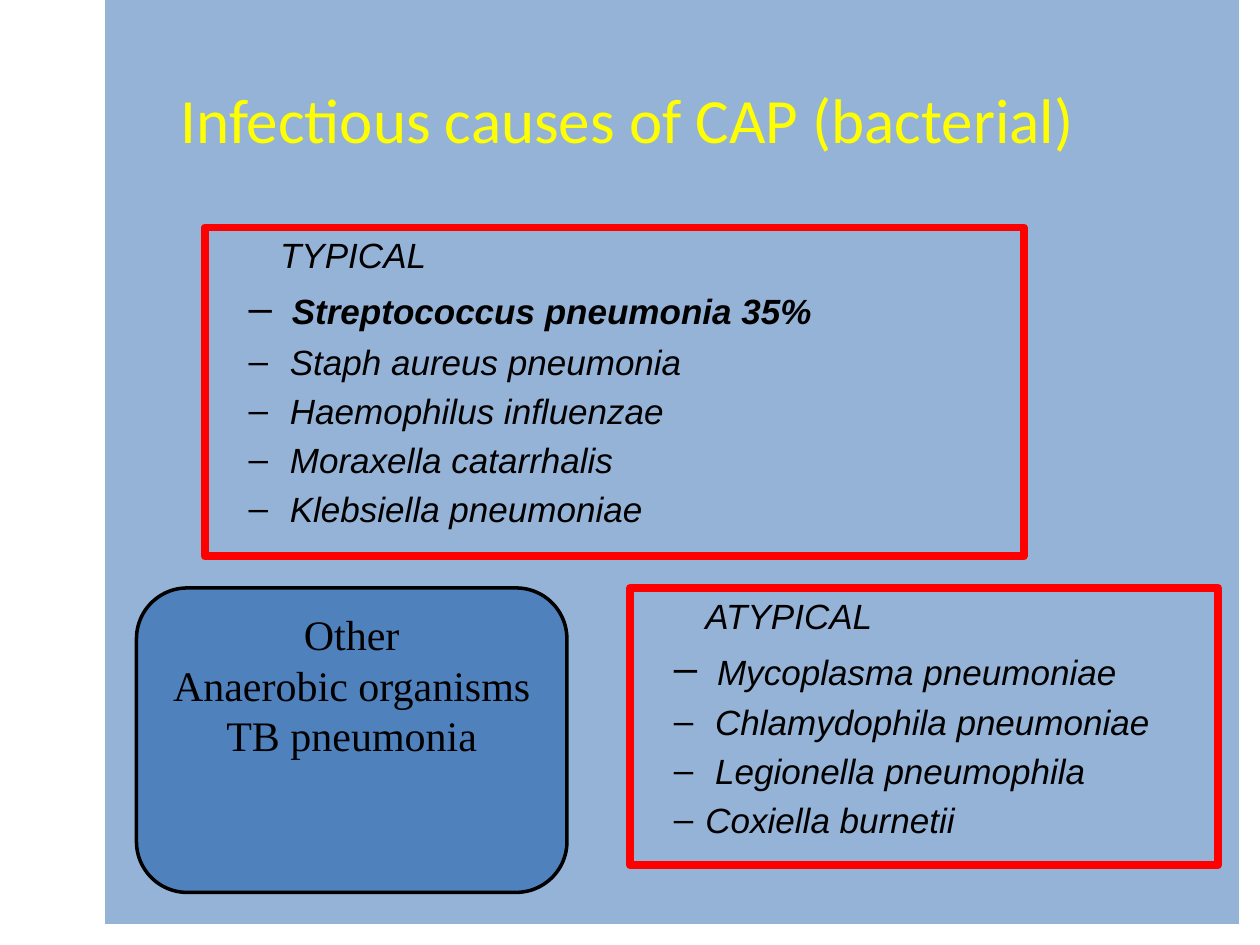
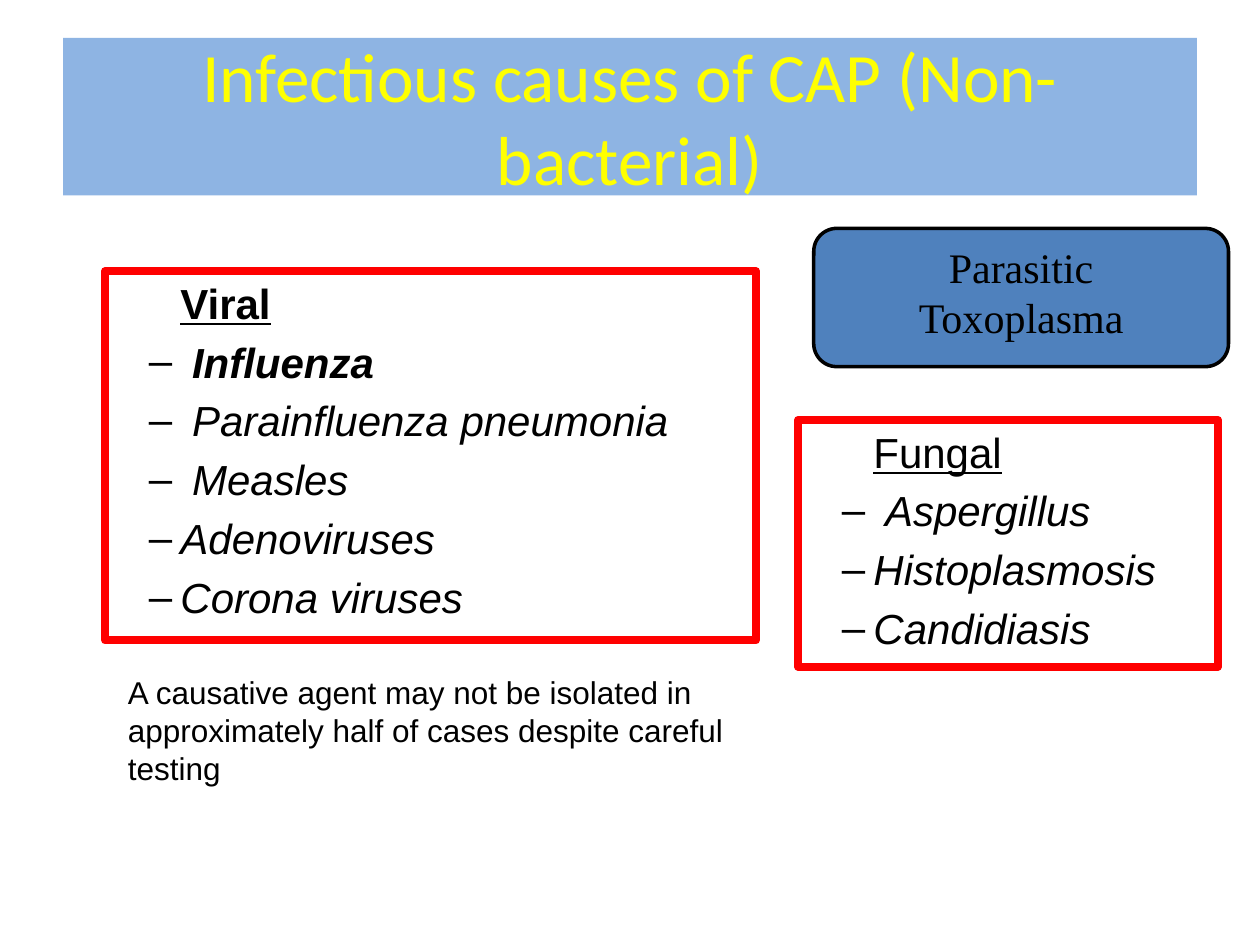
from lxml.etree import SubElement
from pptx import Presentation
from pptx.dml.color import RGBColor
from pptx.enum.shapes import MSO_SHAPE
from pptx.enum.text import MSO_ANCHOR, MSO_AUTO_SIZE, PP_ALIGN
from pptx.oxml.ns import qn
from pptx.util import Pt

YELLOW = RGBColor(0xFF, 0xFF, 0x00)
RED = RGBColor(0xFF, 0x00, 0x00)
BLACK = RGBColor(0x00, 0x00, 0x00)
BLUE = RGBColor(0x4F, 0x81, 0xBD)
PALE = RGBColor(0x95, 0xB3, 0xD7)
SKY = RGBColor(0x8E, 0xB4, 0xE3)

LEAD = 24
PITCH = 1.2
GAP = 0.2
INDENT = 36
HANG = 18


def apply(target, values):
    for name, value in values.items():
        setattr(target, name, value)


def place(shape, box):
    apply(shape, dict(zip(("left", "top", "width", "height"), map(Pt, box))))


def add_run(para, text, size, face="Arial", color=BLACK, **style):
    run = para.add_run()
    run.text = text
    apply(run.font, {"size": Pt(size), "name": face, **style})
    run.font.color.rgb = color


def add_para(frame, tall, align=PP_ALIGN.LEFT, before=0):
    first = frame.paragraphs[0]
    para = frame.add_paragraph() if first.runs else first
    apply(para, {"alignment": align, "line_spacing": Pt(tall * PITCH),
                 "space_before": Pt(before)})
    return para


def add_dash(para):
    props = para._p.get_or_add_pPr()
    props.set("marL", str(Pt(INDENT)))
    props.set("indent", str(-Pt(HANG)))
    SubElement(props, qn("a:buFont")).set("typeface", "Arial")
    SubElement(props, qn("a:buChar")).set("char", "–")


def add_box(slide, kind, box, edge, width, fill=None):
    shape = slide.shapes.add_shape(kind, *map(Pt, box))
    shape.shadow.inherit = False
    if fill is None:
        shape.fill.background()
    else:
        shape.fill.solid()
        shape.fill.fore_color.rgb = fill
    shape.line.color.rgb = edge
    shape.line.width = Pt(width)
    apply(shape.text_frame, {"word_wrap": True, "vertical_anchor": MSO_ANCHOR.TOP})
    return shape.text_frame


def add_title(slide, text, box, fill, size, align, **layout):
    title = slide.shapes.title
    place(title, box)
    title.fill.solid()
    title.fill.fore_color.rgb = fill
    frame = title.text_frame
    apply(frame, {"word_wrap": True, "auto_size": MSO_AUTO_SIZE.NONE, **layout})
    add_run(add_para(frame, size, align), text, size, "Calibri", YELLOW)


def add_list(slide, box, head, items, size, style, bold=False):
    frame = add_box(slide, MSO_SHAPE.RECTANGLE, box, RED, 4.5)
    para = add_para(frame, size)
    para._p.get_or_add_pPr().set("marL", str(Pt(INDENT)))
    add_run(para, head, size, **style)
    for index, item in enumerate(items):
        first = index == 0
        para = add_para(frame, LEAD if first else size, before=size * GAP)
        add_dash(para)
        strong = bold and first
        if first:
            add_run(para, " ", LEAD, bold=strong)
        add_run(para, item, size, bold=strong, italic=True)


def add_card(slide, box, lines):
    frame = add_box(slide, MSO_SHAPE.ROUNDED_RECTANGLE, box, BLACK, 2, BLUE)
    for line in lines:
        add_run(add_para(frame, LEAD, PP_ALIGN.CENTER), line, LEAD, "Times New Roman")


def add_note(slide, box, text):
    frame = slide.shapes.add_textbox(*map(Pt, box)).text_frame
    frame.word_wrap = True
    add_run(add_para(frame, 18), text, 18)


def draw_germs(slide):
    add_title(slide, "Infectious causes of CAP (bacterial)", (60, 0, 648, 528),
              PALE, 36, PP_ALIGN.LEFT, vertical_anchor=MSO_ANCHOR.TOP,
              margin_left=Pt(43.2), margin_top=Pt(46))
    slant = {"italic": True}
    add_list(slide, (117, 130, 468, 188), "TYPICAL",
             ("Streptococcus pneumonia 35%", " Staph aureus pneumonia",
              " Haemophilus influenzae", " Moraxella catarrhalis",
              " Klebsiella pneumoniae"), 20, slant, bold=True)
    add_list(slide, (360, 336, 336, 158.4), "ATYPICAL",
             ("Mycoplasma pneumoniae", " Chlamydophila pneumoniae",
              " Legionella pneumophila", "Coxiella burnetii"), 20, slant)
    add_card(slide, (78, 336, 246, 174),
             ("Other", "Anaerobic organisms", "TB pneumonia"))


def draw_others(slide):
    add_title(slide, "Infectious causes of CAP (Non-bacterial)", (36, 21.6, 648, 90),
              SKY, 39.6, PP_ALIGN.CENTER, vertical_anchor=MSO_ANCHOR.MIDDLE)
    add_list(slide, (60, 155, 372, 211), "Viral",
             ("Influenza", " Parainfluenza pneumonia", " Measles",
              "Adenoviruses", "Corona viruses"), 24,
             {"bold": True, "underline": True}, bold=True)
    add_list(slide, (456, 240, 240, 141), "Fungal",
             ("Aspergillus", "Histoplasmosis", "Candidiasis"), 24,
             {"underline": True})
    add_card(slide, (465, 130.5, 237, 79), ("Parasitic", "Toxoplasma"))
    add_note(slide, (66, 381, 360, 73),
             "A causative agent may not be isolated in approximately half of "
             "cases despite careful testing")


def main():
    deck = Presentation()
    apply(deck, {"slide_width": Pt(720), "slide_height": Pt(540)})
    for draw in (draw_germs, draw_others):
        draw(deck.slides.add_slide(deck.slide_layouts[5]))
    deck.save("out.pptx")


if __name__ == "__main__":
    main()
